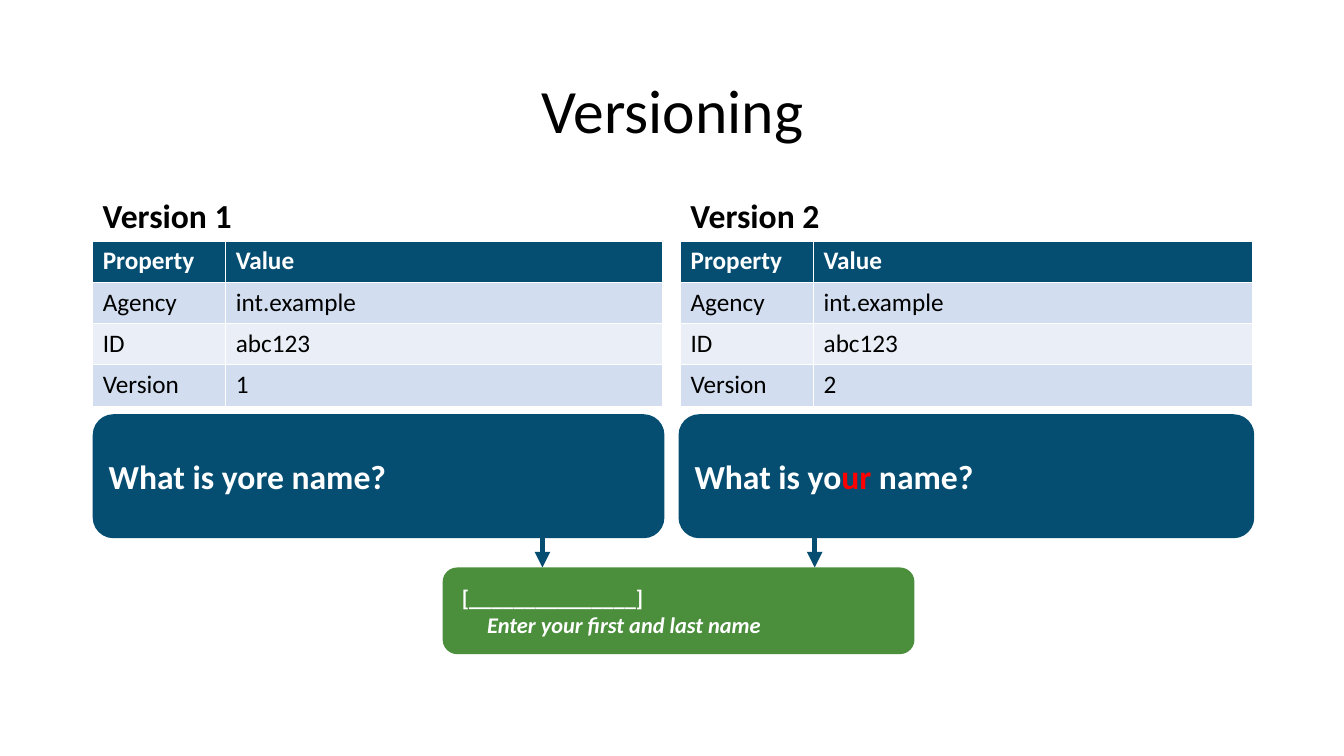
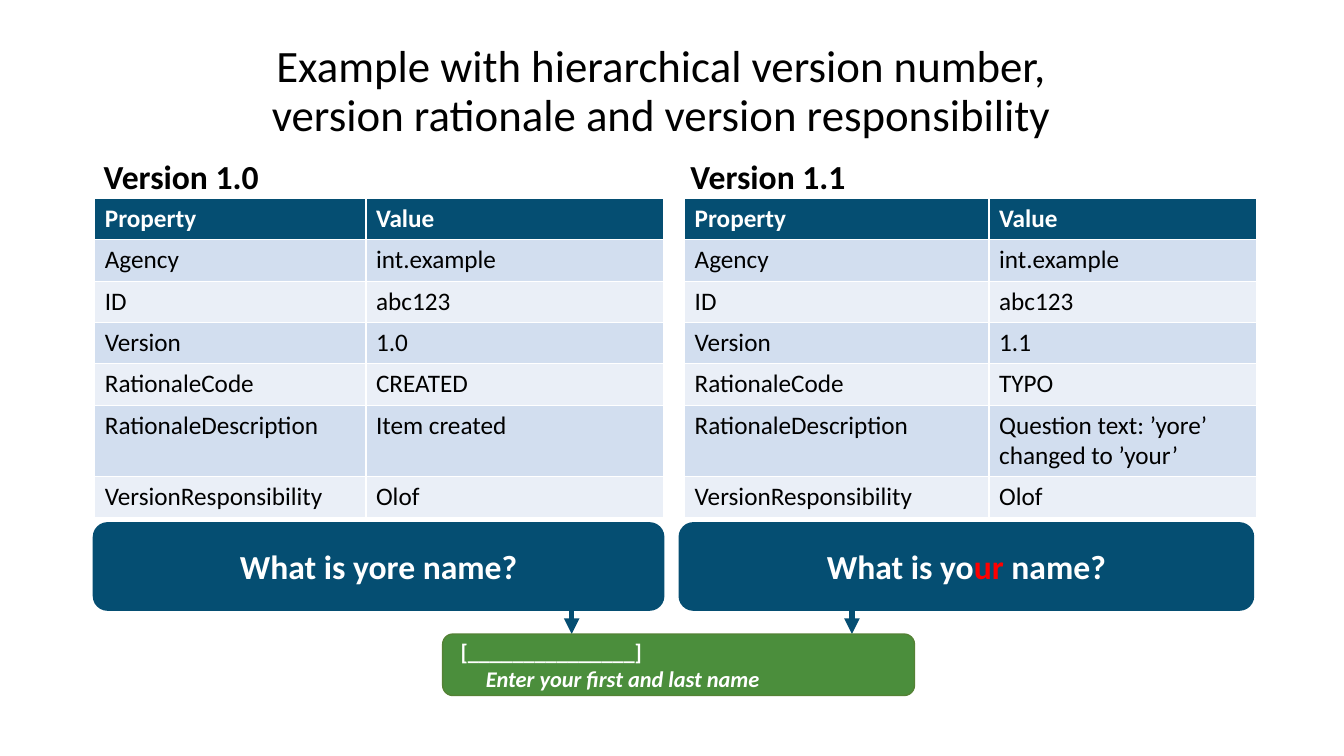
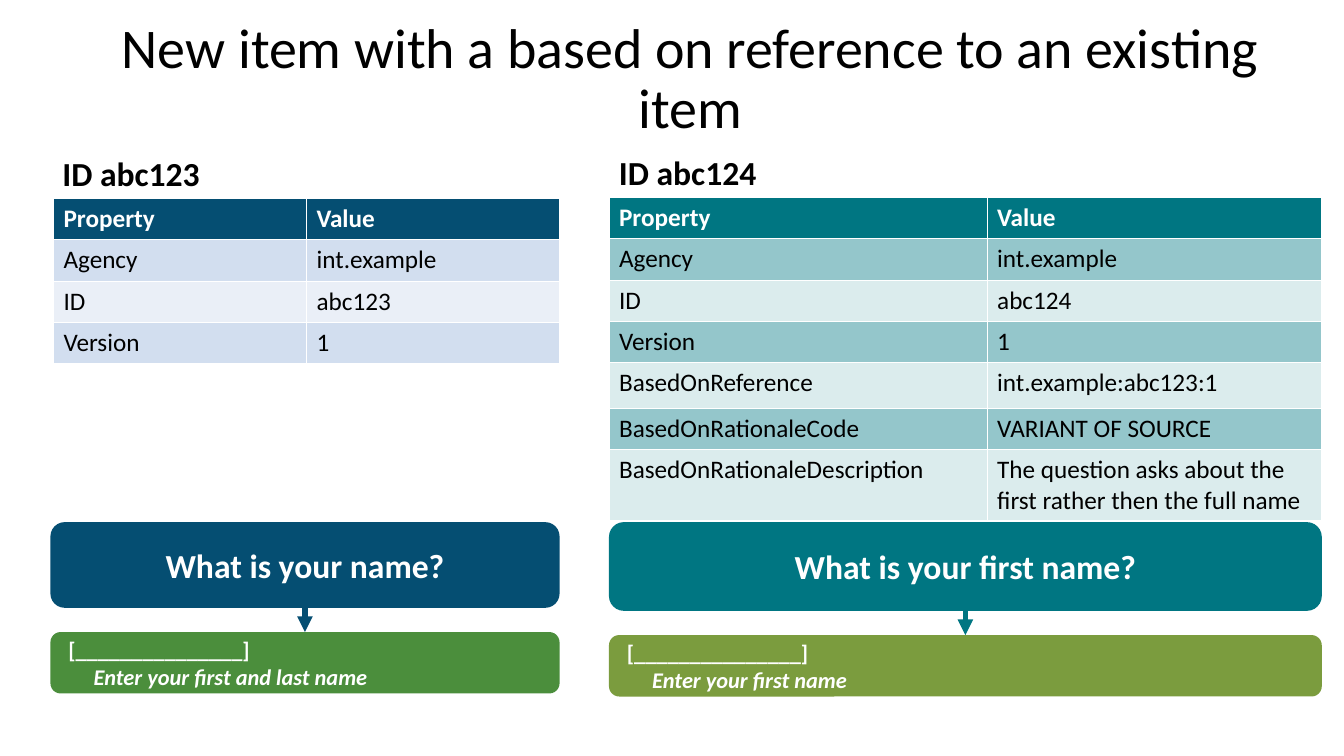
from pptx import Presentation
from pptx.dml.color import RGBColor as Rgb
from pptx.enum.shapes import MSO_CONNECTOR as Line, MSO_SHAPE as Shape
from pptx.enum.text import MSO_ANCHOR as Anchor, PP_ALIGN as Align
from pptx.oxml.ns import qn
from pptx.util import Inches, Pt
from lxml.etree import SubElement

FONT = "Calibri"
HEX = {
    "black": "000000", "white": "FFFFFF", "red": "FF0000",
    "navy": "054E72", "teal": "007682",
    "green": "4B8E3C", "olive": "7B9C3E", "edge": "548235",
}
BANDS = {"navy": ("D2DEEF", "EAEFF7"), "teal": ("94C6CB", "DBECED")}
ROW = 0.41
BASE = [("Property", "Value"), ("Agency", "int.example")]
HINT = "Enter your first and last name"
YORE = ["What is yore name?"]
YOUR = ["What is yo", "ur", " name?"]


def color(name):
    """Return the colour of that name."""
    return Rgb.from_string(HEX[name])


def style(run, size, tone="white", bold=True, italic=False):
    """Format one run."""
    font = run.font
    font.name, font.size = FONT, Pt(size)
    font.bold, font.italic = bold, italic
    font.color.rgb = color(tone)


def add_text(slide, box, text, size, anchor, align=Align.LEFT, bold=False):
    """Add a black text box with tight lines."""
    frame = slide.shapes.add_textbox(*map(Inches, box)).text_frame
    frame.word_wrap = True
    frame.vertical_anchor = anchor
    para = frame.paragraphs[0]
    para.text = text
    para.alignment, para.line_spacing = align, 0.9
    for run in para.runs:
        style(run, size, "black", bold)


def add_title(slide, box, text, size):
    """Add the centred slide title."""
    add_text(slide, box, text, size, Anchor.MIDDLE, Align.CENTER)


def add_label(slide, x, bottom, text):
    """Add a bold heading that ends at the given height."""
    add_text(slide, (x, bottom - 0.6, 5.64, 0.6), text, 24, Anchor.BOTTOM, bold=True)


def add_grid(slide, x, y, cols, rows, tone="navy", tall={}):
    """Add a property table with a header row and banded body."""
    highs = [tall.get(i, ROW) for i in range(len(rows))]
    box = map(Inches, (x, y, sum(cols), sum(highs)))
    table = slide.shapes.add_table(len(rows), len(cols), *box).table
    for col, wide in zip(table.columns, cols):
        col.width = Inches(wide)
    for i, (row, high) in enumerate(zip(table.rows, highs)):
        row.height = Inches(high)
        for cell, text in zip(row.cells, rows[i]):
            head = i == 0
            cell.text = text
            style(cell.text_frame.paragraphs[0].runs[0], 18,
                  "white" if head else "black", head)
            cell.fill.solid()
            fill = HEX[tone] if head else BANDS[tone][(i + 1) % 2]
            cell.fill.fore_color.rgb = Rgb.from_string(fill)


def add_card(slide, box, tone, edge=None):
    """Add a rounded box and return its text frame."""
    card = slide.shapes.add_shape(Shape.ROUNDED_RECTANGLE, *map(Inches, box))
    card.shadow.inherit = False
    card.fill.solid()
    card.fill.fore_color.rgb = color(tone)
    if edge:
        card.line.color.rgb = color(edge)
        card.line.width = Pt(1)
    else:
        card.line.fill.background()
    frame = card.text_frame
    frame.word_wrap = True
    frame.vertical_anchor = Anchor.MIDDLE
    return frame


def add_ask(slide, box, parts, tone="navy", align=Align.CENTER):
    """Add a question box, its second part in red."""
    para = add_card(slide, box, tone).paragraphs[0]
    para.alignment = align
    for i, part in enumerate(parts):
        run = para.add_run()
        run.text = part
        style(run, 24, "red" if i == 1 else "white")


def add_reply(slide, box, hint, tone="green", edge=None):
    """Add an answer box with a blank field and an indented hint."""
    frame = add_card(slide, box, tone, edge)
    frame.text = "[_______________]\n" + hint
    for para, indent, italic in zip(frame.paragraphs, (0.05, 0.3), (False, True)):
        para.alignment = Align.LEFT
        para._p.get_or_add_pPr().set("marL", str(Inches(indent)))
        style(para.runs[0], 16, italic=italic)


def add_arrow(slide, x, top, end, tone="navy"):
    """Add a thick arrow pointing down."""
    arrow = slide.shapes.add_connector(Line.STRAIGHT, *map(Inches, (x, top, x, end)))
    arrow.line.color.rgb = color(tone)
    arrow.line.width = Pt(3.75)
    SubElement(arrow.line._get_or_add_ln(), qn("a:tailEnd"), type="triangle")
    SubElement(arrow._element.spPr, qn("a:effectLst"))


def add_pair(slide, top, high, reply, arrows, align=Align.CENTER, edge=None):
    """Add two question boxes that point to one shared answer box."""
    for x in arrows:
        add_arrow(slide, x, top + high - 0.1, reply[1])
    add_ask(slide, (0.92, top, 5.67, high), YORE, align=align)
    add_ask(slide, (6.73, top, 5.71, high), YOUR, align=align)
    add_reply(slide, reply, HINT, edge=edge)


def add_flow(slide, box, parts, hint, tone, shade):
    """Add one question box that points to its own answer box."""
    x, y, wide, high = box
    end = y + high + 0.24
    add_arrow(slide, x + wide / 2, y + high - 0.1, end, tone)
    add_ask(slide, box, parts, tone)
    add_reply(slide, (x, end, wide, 0.61), hint, shade)


def versions(slide):
    """Build the slide on plain version numbers."""
    add_title(slide, (0.92, 0.4, 11.5, 1.45), "Versioning", 44)
    for x, wide, mark in ((0.92, 4.33, "1"), (6.75, 4.35, "2")):
        add_label(slide, x, 2.39, "Version " + mark)
        rows = BASE + [("ID", "abc123"), ("Version", mark)]
        add_grid(slide, x, 2.39, (1.32, wide), rows)
    add_pair(slide, 4.11, 1.23, (4.39, 5.63, 4.68, 0.86), (5.38, 8.08), Align.LEFT)


def reasons(slide):
    """Build the slide on version rationale and responsibility."""
    add_title(slide, (0.81, 0.19, 11.5, 1.45),
              "Example with hierarchical version number,\n"
              "version rationale and version responsibility", 32)
    sides = (
        (0.93, 0.94, (2.69, 2.95), "1.0", "CREATED", "Item created"),
        (6.75, 6.79, (3.02, 2.65), "1.1", "TYPO",
         "Question text: ’yore’ changed to ’your’"),
    )
    for left, x, cols, mark, code, note in sides:
        add_label(slide, left, 2, "Version " + mark)
        rows = BASE + [
            ("ID", "abc123"), ("Version", mark), ("RationaleCode", code),
            ("RationaleDescription", note), ("VersionResponsibility", "Olof"),
        ]
        add_grid(slide, x, 1.97, cols, rows, tall={5: 0.71})
    add_pair(slide, 5.18, 0.88, (4.39, 6.29, 4.68, 0.61), (5.67, 8.45), edge="edge")


def variant(slide):
    """Build the slide on a new item based on another."""
    add_title(slide, (0.58, 0.15, 12.53, 1.29),
              "New item with a based on reference to an existing item", 40)
    add_label(slide, 0.52, 1.97, "ID abc123")
    add_label(slide, 6.04, 1.96, "ID abc124")
    old = BASE + [("ID", "abc123"), ("Version", "1")]
    new = BASE + [
        ("ID", "abc124"), ("Version", "1"),
        ("BasedOnReference", "int.example:abc123:1"),
        ("BasedOnRationaleCode", "VARIANT OF SOURCE"),
        ("BasedOnRationaleDescription",
         "The question asks about the first rather then the full name"),
    ]
    add_grid(slide, 0.53, 1.97, (2.51, 2.51), old)
    add_grid(slide, 6.04, 1.96, (3.75, 3.32), new, "teal", {4: 0.45, 6: 0.71})
    add_flow(slide, (0.5, 5.18, 5.05, 0.85), ["What is your name?"], HINT,
             "navy", "green")
    add_flow(slide, (6.04, 5.18, 7.07, 0.88), ["What is your first name?"],
             "Enter your first name", "teal", "olive")


def main():
    """Build and save the slides."""
    deck = Presentation()
    deck.slide_width, deck.slide_height = Inches(13.33), Inches(7.5)
    for build in (versions, reasons, variant):
        build(deck.slides.add_slide(deck.slide_layouts[6]))
    deck.save("out.pptx")


if __name__ == "__main__":
    main()
